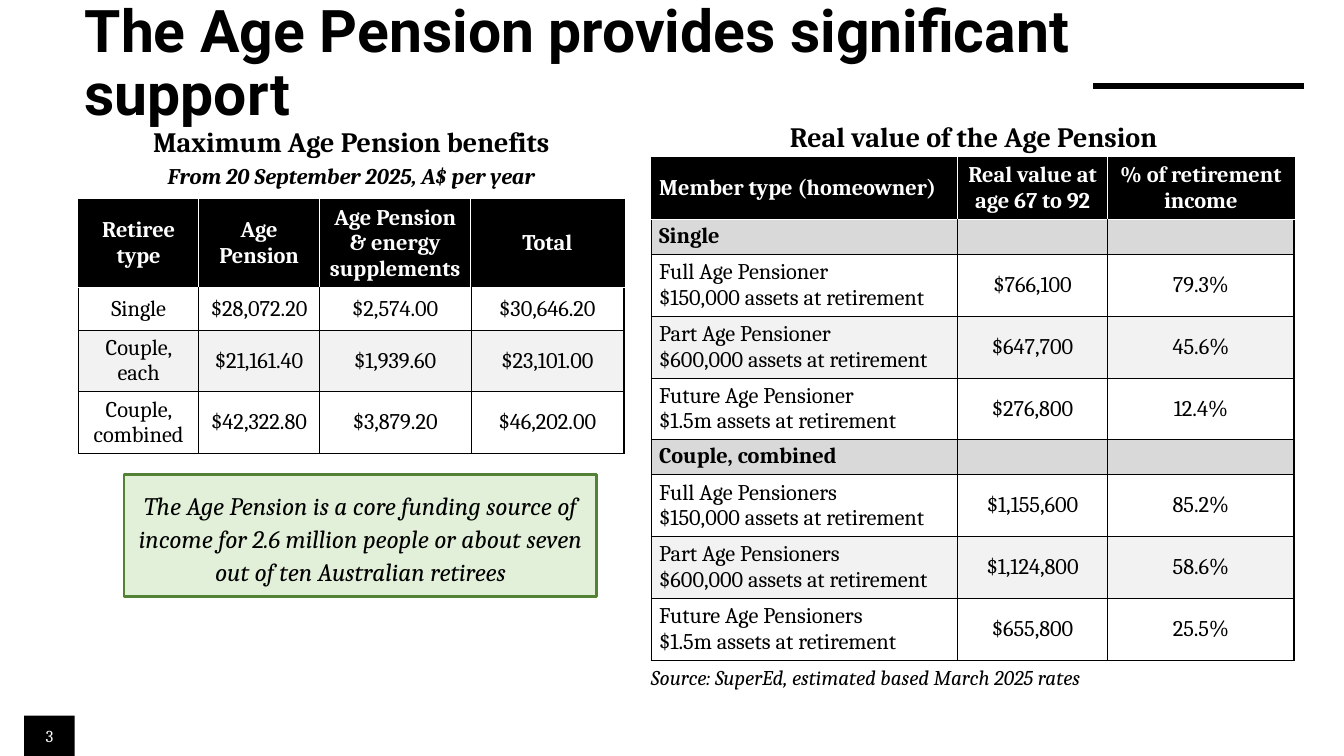
from lxml import etree
from pptx import Presentation
from pptx.dml.color import RGBColor
from pptx.enum import shapes, text
from pptx.oxml.ns import qn
from pptx.util import Pt

HUES = {"ink": "000000", "paper": "FFFFFF", "band": "F2F2F2",
        "group": "D9D9D9", "mint": "E2F0D9", "leaf": "548235"}
SERIF = "Cambria"
MID, TOP = text.MSO_ANCHOR.MIDDLE, text.MSO_ANCHOR.TOP
LEFT, MIDDLE = text.PP_ALIGN.LEFT, text.PP_ALIGN.CENTER

TITLE = "The Age Pension provides significant support"
CALLOUT = ("The Age Pension is a core funding source of income for 2.6 million "
           "people or about seven out of ten Australian retirees")
SOURCE = "Source: SuperEd, estimated based March 2025 rates"
HEADS = [
    ((56.2, 85, 389.5, 54), [("Maximum Age Pension benefits", 20, False),
                             ("From 20 September 2025, A$ per year", 16, True)]),
    ((513.4, 81.4, 364.3, 31.7), [("Real value of the Age Pension", 20, False)]),
]
BENEFITS = [
    ("Retiree type", "Age Pension", "Age Pension & energy supplements", "Total"),
    ("Single", "$28,072.20", "$2,574.00", "$30,646.20"),
    ("Couple, each", "$21,161.40", "$1,939.60", "$23,101.00"),
    ("Couple, combined", "$42,322.80", "$3,879.20", "$46,202.00"),
]
ASSETS = ["$150,000", "$600,000", "$1.5m"]
GROUPS = [
    ("Single", "Pensioner", [("$766,100", "79.3%"), ("$647,700", "45.6%"),
                             ("$276,800", "12.4%")]),
    ("Couple, combined", "Pensioners", [("$1,155,600", "85.2%"), ("$1,124,800", "58.6%"),
                                        ("$655,800", "25.5%")]),
]
VALUES = [("Member type (homeowner)", "Real value at age 67 to 92", "% of retirement income")]
for group, noun, pairs in GROUPS:
    VALUES.append((group, "", ""))
    for kind, asset, pair in zip(["Full", "Part", "Future"], ASSETS, pairs):
        VALUES.append((f"{kind} Age {noun}\n{asset} assets at retirement", *pair))


def hue(name):
    return RGBColor.from_string(HUES[name])


def style(para, size, color="ink", align=LEFT, bold=False, italic=False, face=SERIF):
    para.alignment = align
    font = para.font
    font.name, font.size, font.bold, font.italic = face, Pt(size), bold, italic
    font.color.rgb = hue(color)


def edge(cell, sides):
    props = cell._tc.get_or_add_tcPr()
    for spot, (side, (color, width)) in enumerate(sides.items()):
        line = etree.Element(qn("a:ln" + side), w=str(Pt(width)))
        fill = etree.SubElement(line, qn("a:solidFill"))
        etree.SubElement(fill, qn("a:srgbClr"), val=HUES[color])
        props.insert(spot, line)


def grid(slide, data, left, top, cols, rows, pad, first):
    frame = slide.shapes.add_table(len(rows), len(cols), Pt(left), Pt(top),
                                   Pt(sum(cols)), Pt(sum(rows)))
    table = frame.table
    for col, width in zip(table.columns, cols):
        col.width = Pt(width)
    for row, height in zip(table.rows, rows):
        row.height = Pt(height)
    last, end = len(rows) - 1, len(cols) - 1
    thin, thick, white = ("ink", 0.5), ("ink", 1), ("paper", 1)
    band = 0
    for r, words in enumerate(data):
        head, group = r == 0, r > 0 and not words[-1]
        band = 0 if head or group else band + 1
        shade = "ink" if head else "group" if group else "paper" if band % 2 else "band"
        inner = white if head else thin
        for c, word in enumerate(words):
            cell = table.cell(r, c)
            cell.text = word
            cell.margin_left = cell.margin_right = Pt(pad)
            cell.margin_top = cell.margin_bottom = Pt(2.88 if word else 0)
            cell.vertical_anchor = TOP if group else MID
            for para in cell.text_frame.paragraphs:
                style(para, 16, "paper" if head else "ink",
                      first if c == 0 else MIDDLE, head or group)
            cell.fill.solid()
            cell.fill.fore_color.rgb = hue(shade)
            edge(cell, {"L": thick if c == 0 else inner,
                        "R": thick if c == end else inner,
                        "T": thick if head else white if r == 1 else thin,
                        "B": white if head else thick if r == last else thin})


def block(slide, box, fill, line=None):
    shape = slide.shapes.add_shape(shapes.MSO_SHAPE.RECTANGLE, *map(Pt, box))
    shape.shadow.inherit = False
    shape.fill.solid()
    shape.fill.fore_color.rgb = hue(fill)
    if line:
        shape.line.color.rgb = hue(line)
        shape.line.width = Pt(2)
    else:
        shape.line.fill.background()
    shape.text_frame.word_wrap = True
    return shape.text_frame


def label(slide, box, lines, align, anchor, bold):
    frame = slide.shapes.add_textbox(*map(Pt, box)).text_frame
    frame.word_wrap, frame.vertical_anchor = True, anchor
    frame.text = "\n".join(line[0] for line in lines)
    for para, (_, size, italic) in zip(frame.paragraphs, lines):
        style(para, size, align=align, bold=bold, italic=italic)
    frame.paragraphs[0].space_after = Pt(3)


def main():
    deck = Presentation()
    deck.slide_width, deck.slide_height = Pt(960), Pt(540)
    slide = deck.slides.add_slide(deck.slide_layouts[5])

    title = slide.shapes.title
    title.left, title.top, title.width, title.height = map(Pt, (53.3, 22.3, 792, 48.2))
    frame = title.text_frame
    frame.text = TITLE
    frame.word_wrap, frame.auto_size = True, text.MSO_AUTO_SIZE.NONE
    frame.vertical_anchor = MID
    frame.paragraphs[0].line_spacing = 0.9
    style(frame.paragraphs[0], 42, bold=True, face="Roboto")

    page = block(slide, (17.3, 511.2, 36, 28.8), "ink")
    page.text, page.vertical_anchor = "3", MID
    style(page.paragraphs[0], 12, "paper", MIDDLE)

    rule = slide.shapes.add_connector(shapes.MSO_CONNECTOR.STRAIGHT,
                                      Pt(781), Pt(61.6), Pt(931.5), Pt(61.6))
    rule.line.color.rgb, rule.line.width = hue("ink"), Pt(4.5)
    etree.SubElement(rule._element.spPr, qn("a:effectLst"))

    for box, lines in HEADS:
        label(slide, box, lines, MIDDLE, MID, True)
    grid(slide, BENEFITS, 56.2, 142.3, [85.7, 86.4, 108, 109.4],
         [60.6, 30, 42.3, 42.3], 2.88, MIDDLE)
    grid(slide, VALUES, 465.1, 112.4, [218.7, 107.5, 133],
         [44.2 if row[-1] else 24.8 for row in VALUES], 5.76, LEFT)
    label(slide, (457.9, 470.9, 339.8, 25.2), [(SOURCE, 15, True)], LEFT, TOP, False)

    note = block(slide, (88.6, 339.1, 337.7, 87.1), "mint", "leaf")
    note.text, note.vertical_anchor = CALLOUT, TOP
    note.margin_left = note.margin_right = note.margin_top = note.margin_bottom = Pt(8.64)
    note.paragraphs[0].line_spacing = 1.1
    style(note.paragraphs[0], 18, align=MIDDLE, italic=True)

    deck.save("out.pptx")


if __name__ == "__main__":
    main()
